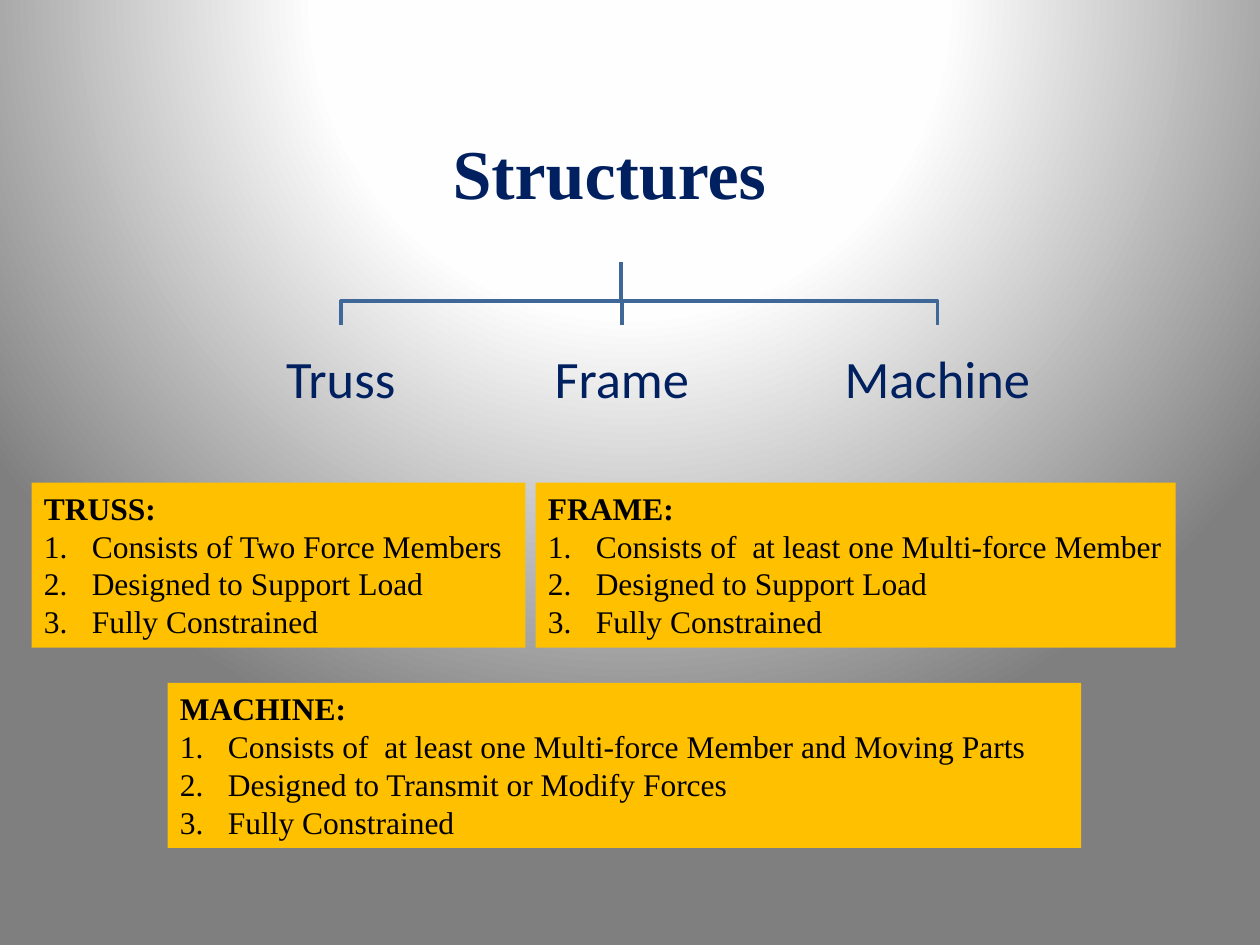
from dataclasses import dataclass

from pptx import Presentation
from pptx.dml.color import RGBColor
from pptx.enum.shapes import MSO_SHAPE
from pptx.enum.text import MSO_ANCHOR, MSO_AUTO_SIZE, PP_ALIGN
from pptx.oxml import parse_xml
from pptx.oxml.ns import qn
from pptx.util import Inches, Pt

RECT = MSO_SHAPE.RECTANGLE
TOP, MIDDLE = MSO_ANCHOR.TOP, MSO_ANCHOR.MIDDLE
LEFT, CENTER = PP_ALIGN.LEFT, PP_ALIGN.CENTER
FIT_SHAPE = MSO_AUTO_SIZE.SHAPE_TO_FIT_TEXT
TITLE_ONLY = 5

GRADIENT = """<a:gradFill xmlns:a="http://schemas.openxmlformats.org/drawingml/2006/main"
 rotWithShape="1"><a:gsLst>{stops}</a:gsLst><a:path path="circle">
<a:fillToRect l="50000" t="-80000" r="50000" b="180000"/></a:path></a:gradFill>"""
STOP = '<a:gs pos="{}"><a:srgbClr val="{}"/></a:gs>'


@dataclass(frozen=True)
class Theme:
    navy: RGBColor = RGBColor(0x00, 0x20, 0x60)
    branch: RGBColor = RGBColor(0x3F, 0x67, 0x97)
    amber: RGBColor = RGBColor(0xFF, 0xC0, 0x00)
    black: RGBColor = RGBColor(0x00, 0x00, 0x00)
    backdrop: tuple = ((0, "FFFFFF"), (40, "FEFEFE"), (100, "7F7F7F"))
    serif: str = "Times New Roman"
    sans: str = "Calibri"
    title_size: int = 40
    kind_size: int = 30
    body_size: int = 18
    branch_width: int = 2


class SlideBuilder:
    def __init__(self, slide, theme):
        self.s = slide
        self.theme = theme

    def background(self):
        fill = self.s.background.fill
        fill.solid()
        solid = self.s._element.find(".//" + qn("a:solidFill"))
        stops = "".join(STOP.format(pos * 1000, rgb) for pos, rgb in self.theme.backdrop)
        solid.getparent().replace(solid, parse_xml(GRADIENT.format(stops=stops)))

    def format_text(self, p, font, size, color, bold=False, align=LEFT):
        p.alignment = align
        for r in p.runs:
            r.font.name, r.font.size, r.font.bold = font, Pt(size), bold
            r.font.color.rgb = color

    def title(self, text, x, y, w, h):
        sp = self.s.shapes.title
        sp.left, sp.top, sp.width, sp.height = map(Inches, (x, y, w, h))
        tf = sp.text_frame
        tf.text = text
        tf.word_wrap, tf.auto_size = False, FIT_SHAPE
        tf.vertical_anchor = TOP
        t = self.theme
        self.format_text(tf.paragraphs[0], t.serif, t.title_size, t.navy, True, CENTER)

    def branch(self, start, bend_y, end):
        """Draw an elbow line that goes down, across and down again."""
        points = [start, (start[0], bend_y), (end[0], bend_y), end]
        points = [(Inches(x), Inches(y)) for x, y in points]
        builder = self.s.shapes.build_freeform(*points[0])
        builder.add_line_segments(points[1:], close=False)
        sp = builder.convert_to_shape()
        sp.shadow.inherit = False
        sp.fill.background()
        sp.line.color.rgb = self.theme.branch
        sp.line.width = Pt(self.theme.branch_width)

    def kind_label(self, text, x, y, w, h):
        tf = self.s.shapes.add_textbox(*map(Inches, (x, y, w, h))).text_frame
        tf.text = text
        tf.word_wrap, tf.vertical_anchor = True, MIDDLE
        tf.margin_left = tf.margin_right = tf.margin_top = tf.margin_bottom = Inches(0.02)
        p = tf.paragraphs[0]
        p.line_spacing = 0.9
        self.format_text(p, self.theme.sans, self.theme.kind_size, self.theme.navy, align=CENTER)

    def number(self, p):
        pPr = p._p.get_or_add_pPr()
        pPr.set("marL", str(Inches(0.38)))
        pPr.set("indent", str(-Inches(0.38)))
        bullet = pPr.makeelement(qn("a:buAutoNum"), {"type": "arabicPeriod"})
        pPr.append(bullet)

    def definition(self, heading, points, x, y, w, h):
        """Draw a filled box with a bold heading above a numbered list."""
        t = self.theme
        sp = self.s.shapes.add_shape(RECT, *map(Inches, (x, y, w, h)))
        sp.shadow.inherit = False
        sp.fill.solid()
        sp.fill.fore_color.rgb = t.amber
        sp.line.fill.background()
        tf = sp.text_frame
        tf.text = "\n".join([heading, *points])
        tf.word_wrap, tf.auto_size = True, FIT_SHAPE
        tf.vertical_anchor = TOP
        for i, p in enumerate(tf.paragraphs):
            self.format_text(p, t.serif, t.body_size, t.black, bold=i == 0)
            if i:
                self.number(p)


def main():
    prs = Presentation()
    prs.slide_width, prs.slide_height = Inches(10), Inches(7.5)
    slide = SlideBuilder(prs.slides.add_slide(prs.slide_layouts[TITLE_ONLY]), Theme())
    slide.background()
    slide.title("Structures", 3.47, 0.98, 2.73, 0.77)

    root, bend_y, label_y = (4.93, 2.08), 2.39, 2.58
    kinds = [("Truss", 1.76, 1.89), ("Frame", 3.81, 2.25), ("Machine", 6.55, 1.78)]
    for text, x, w in kinds:
        slide.branch(root, bend_y, (x + w / 2, label_y))
        slide.kind_label(text, x, label_y, w, 0.89)

    load, constrained = "Designed to Support Load", "Fully Constrained"
    multi_force = "Consists of  at least one Multi-force Member"
    definitions = [
        ("TRUSS:", ["Consists of Two Force Members", load], 0.25, 3.83, 3.92),
        ("FRAME:", [multi_force, load], 4.25, 3.83, 5.08),
        ("MACHINE:", [multi_force + " and Moving Parts",
                      "Designed to Transmit or Modify Forces"], 1.33, 5.42, 7.25),
    ]
    for heading, points, x, y, w in definitions:
        slide.definition(heading, [*points, constrained], x, y, w, 1.31)

    prs.save("out.pptx")


if __name__ == "__main__":
    main()
